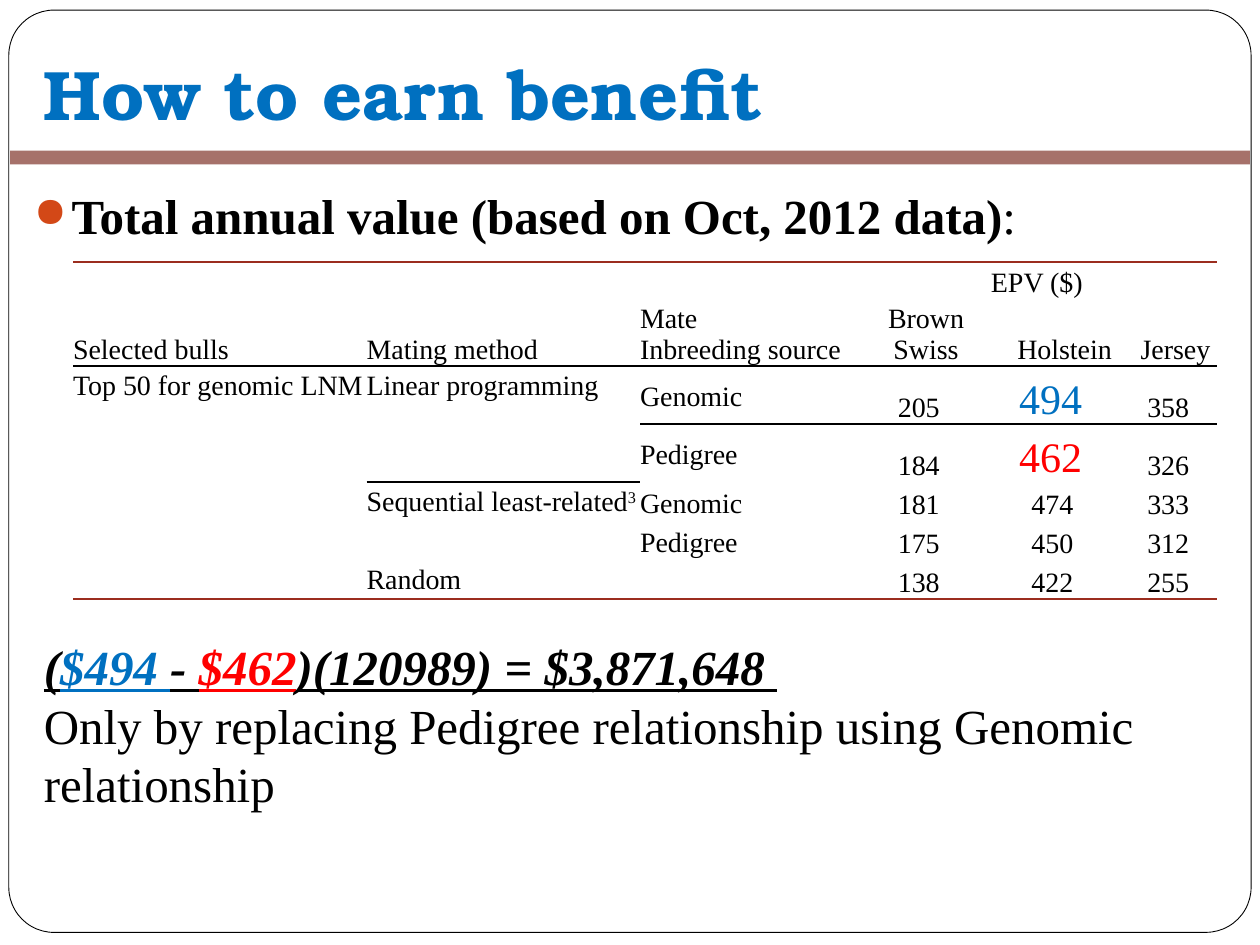
from dataclasses import dataclass

from lxml import etree
from pptx import Presentation
from pptx.dml.color import RGBColor
from pptx.enum.shapes import MSO_CONNECTOR, MSO_SHAPE
from pptx.enum.text import MSO_ANCHOR as ANCHOR, PP_ALIGN as ALIGN
from pptx.oxml.ns import qn
from pptx.util import Inches, Pt


@dataclass(frozen=True)
class Theme:
    black: str = "000000"
    white: str = "FFFFFF"
    blue: str = "0070C0"
    red: str = "FF0000"
    brick: str = "9B2D1F"
    rule: str = "742217"
    bullet: str = "D34817"
    title_font: str = "TeX Gyre Bonum"
    body_font: str = "Times New Roman"
    title_size: int = 40
    body_size: int = 28
    accent_size: int = 24
    table_size: int = 16


theme = Theme()


def add_run(paragraph, text, size, color=theme.black, font=theme.body_font, **styles):
    run = paragraph.add_run()
    run.text = text
    run.font.color.rgb = RGBColor.from_string(color)
    for name, value in {"name": font, "size": Pt(size), **styles}.items():
        setattr(run.font, name, value)
    return run


def add_border(cell, side, color):
    """Draw a 1 pt border on the top (T) or bottom (B) of a cell."""
    properties = cell._tc.get_or_add_tcPr()
    line = etree.Element(qn(f"a:ln{side}"), w=str(Pt(1)))
    fill = etree.SubElement(line, qn("a:solidFill"))
    etree.SubElement(fill, qn("a:srgbClr"), val=color)
    # Borders come before the fill, the top one first.
    properties.insert(0 if side == "T" else len(properties.findall(qn("a:lnT"))), line)


presentation = Presentation()
presentation.slide_width = Inches(10)
presentation.slide_height = Inches(7.5)
slide = presentation.slides.add_slide(presentation.slide_layouts[6])

# Frame and title rule
frame = slide.shapes.add_shape(
    MSO_SHAPE.ROUNDED_RECTANGLE, Inches(0.07), Inches(0.08), Inches(9.86), Inches(7.32))
frame.adjustments[0] = 0.049
frame.shadow.inherit = False
frame.fill.solid()
frame.fill.fore_color.rgb = RGBColor.from_string(theme.white)
frame.line.color.rgb = RGBColor.from_string(theme.black)
frame.line.width = Pt(0.5)

title_rule = slide.shapes.add_connector(
    MSO_CONNECTOR.STRAIGHT, Inches(0.08), Inches(1.25), Inches(9.92), Inches(1.25))
title_rule.line.color.rgb = RGBColor.from_string(theme.rule)
title_rule.line.width = Pt(8)
rule_properties = title_rule._element.spPr
etree.SubElement(rule_properties.find(".//" + qn("a:srgbClr")), qn("a:alpha"), val="63000")
etree.SubElement(rule_properties, qn("a:effectLst"))

# Title, bullet and conclusion
frames = []
for left, top, width, height, anchor in (
    (0.25, 0.22, 8.5, 0.95, ANCHOR.BOTTOM),
    (0.17, 1.42, 8.5, 0.67, ANCHOR.TOP),
    (0.25, 5, 9.5, 1.51, ANCHOR.TOP),
):
    box = slide.shapes.add_textbox(Inches(left), Inches(top), Inches(width), Inches(height))
    box.text_frame.word_wrap = True
    box.text_frame.vertical_anchor = anchor
    frames.append(box.text_frame)
title, heading, conclusion = frames

title.margin_bottom = Inches(0.1)
add_run(title.paragraphs[0], "How to earn benefit", theme.title_size, theme.blue,
        theme.title_font, bold=True)

paragraph = heading.paragraphs[0]
paragraph.space_before = Pt(5.8)
add_run(paragraph, "Total annual value (based on Oct, 2012 data)", theme.body_size, bold=True)
add_run(paragraph, ":", theme.body_size)
bullet_properties = paragraph._p.get_or_add_pPr()
bullet_properties.set("marL", str(Inches(0.3)))
bullet_properties.set("indent", str(Inches(-0.3)))
bullet_color = etree.SubElement(bullet_properties, qn("a:buClr"))
etree.SubElement(bullet_color, qn("a:srgbClr"), val=theme.bullet)
etree.SubElement(bullet_properties, qn("a:buSzPct"), val="85000")
etree.SubElement(bullet_properties, qn("a:buChar"), char="●")

for text, color in (
    ("(", theme.black),
    ("$494 ", theme.blue),
    ("- ", theme.black),
    ("$462", theme.red),
    (")(120989) = $3,871,648 ", theme.black),
):
    add_run(conclusion.paragraphs[0], text, theme.body_size, color,
            bold=True, italic=True, underline=True)
add_run(conclusion.add_paragraph(),
        "Only by replacing Pedigree relationship using Genomic relationship", theme.body_size)

# Table
column_widths = [2.33, 2.17, 1.72, 1.1, 1.1, 0.66]
row_heights = [0.29, 0.51, 0.46, 0.46, 0.31, 0.31, 0.31]
rows = [
    ["Selected bulls", "Mating method", "Mate\nInbreeding source", "EPV ($)", "", ""],
    ["", "", "", "Brown Swiss", "Holstein", "Jersey"],
    ["Top 50 for genomic LNM", "Linear programming", "Genomic", "205 ", "494 ", "358 "],
    ["", "", "Pedigree", "184 ", "462 ", "326 "],
    ["", "Sequential least-related", "Genomic", "181 ", "474 ", "333 "],
    ["", "", "Pedigree", "175 ", "450 ", "312 "],
    ["", "Random", "", "138 ", "422 ", "255 "],
]
accents = {(2, 4): theme.blue, (3, 4): theme.red}
header_rows = 2
first_value_column = 3

table = slide.shapes.add_table(
    len(rows), len(column_widths), Inches(0.58), Inches(2.08),
    Inches(sum(column_widths)), Inches(sum(row_heights))).table
table.first_row = table.horz_banding = False
style_id = table._tbl.tblPr.find(qn("a:tableStyleId"))
style_id.text = "{2D5ABB26-0587-4C30-8999-92F81FD0307C}"  # no style, no grid
for column, width in zip(table.columns, column_widths):
    column.width = Inches(width)
for row, height in zip(table.rows, row_heights):
    row.height = Inches(height)

for r, texts in enumerate(rows):
    for c, text in enumerate(texts):
        cell = table.cell(r, c)
        cell.fill.background()
        is_header, is_value = r < header_rows, c >= first_value_column
        right = 0 if is_header or not is_value else 0.14 if c == 4 else 0.06
        if is_header or is_value:
            anchor = ANCHOR.BOTTOM
        else:
            anchor = ANCHOR.MIDDLE if c == 2 else ANCHOR.TOP
        for name, value in {
            "margin_left": 0, "margin_top": 0, "margin_bottom": 0,
            "margin_right": Inches(right), "vertical_anchor": anchor,
        }.items():
            setattr(cell, name, value)
        for index, line in enumerate(text.split("\n")):
            paragraph = cell.text_frame.add_paragraph() if index else cell.text_frame.paragraphs[0]
            paragraph.alignment = ALIGN.CENTER if is_value else ALIGN.LEFT
            paragraph.line_spacing = 1 if is_header else 1.15
            if line:
                size = theme.accent_size if (r, c) in accents else theme.table_size
                add_run(paragraph, line, size, accents.get((r, c), theme.black))

footnote = add_run(table.cell(4, 1).text_frame.paragraphs[0], "3", theme.table_size)
footnote.font._element.set("baseline", "30000")

for first, last in (
    ((0, 0), (1, 0)), ((0, 1), (1, 1)), ((0, 2), (1, 2)), ((0, 3), (0, 5)),
    ((2, 0), (6, 0)), ((2, 1), (3, 1)), ((4, 1), (5, 1)),
):
    table.cell(*first).merge(table.cell(*last))

# Borders: row, columns, side, colour
for r, columns, side, color in (
    (0, range(6), "T", theme.brick),
    (0, range(3), "B", theme.black),
    (1, range(6), "B", theme.black),
    (2, range(6), "T", theme.black),
    (2, range(1), "B", theme.brick),
    (2, range(1, 6), "B", theme.black),
    (3, range(1, 2), "B", theme.black),
    (6, range(6), "B", theme.brick),
):
    for c in columns:
        add_border(table.cell(r, c), side, color)

presentation.save("out.pptx")
